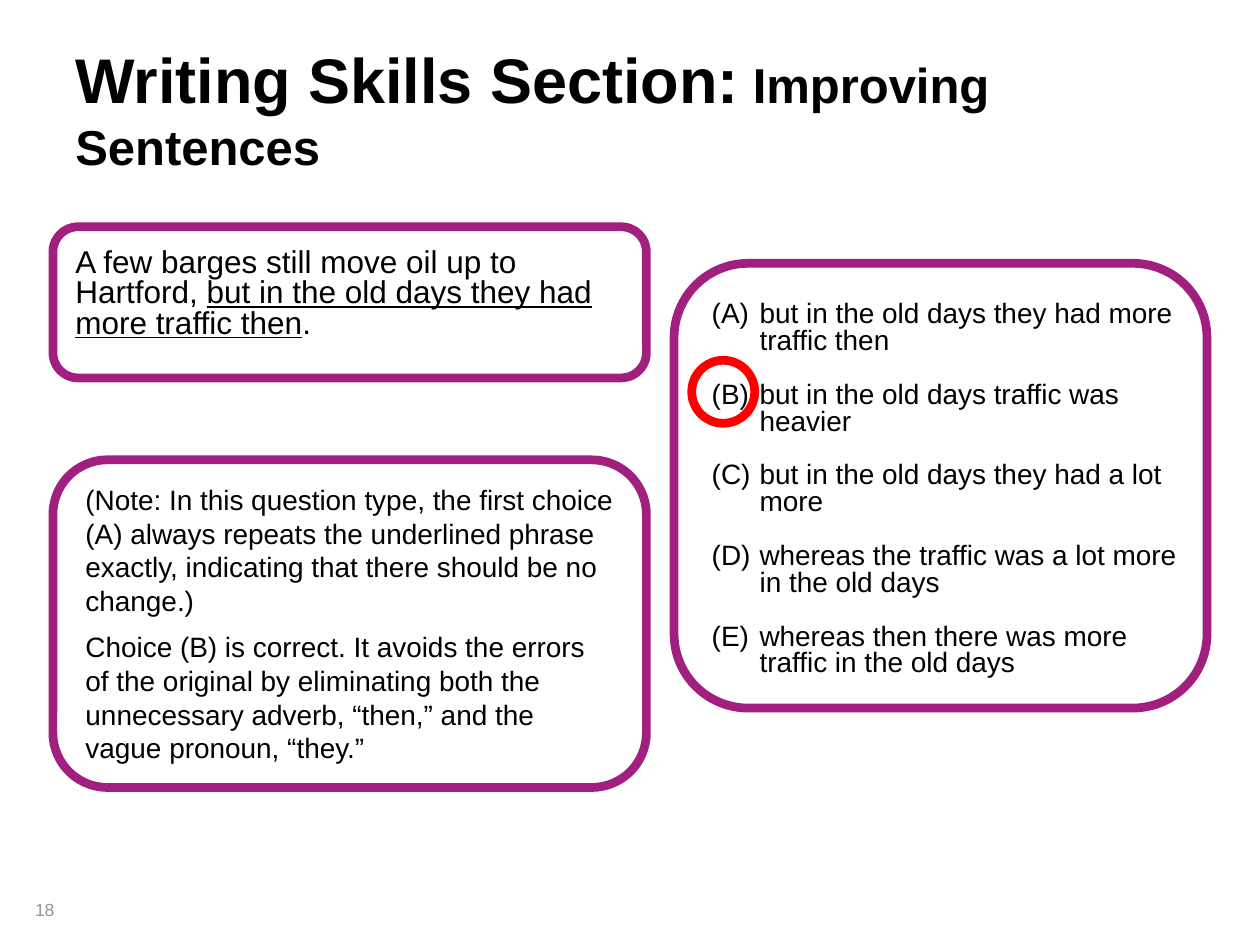
import lxml.etree
import pptx
import pptx.dml.color
import pptx.enum.shapes
import pptx.enum.text
import pptx.oxml.ns
import pptx.util

Inches = pptx.util.Inches
Pt = pptx.util.Pt
Shape = pptx.enum.shapes.MSO_SHAPE
Anchor = pptx.enum.text.MSO_ANCHOR

CHOICES = [
    "but in the old days they had more traffic then",
    "but in the old days traffic was heavier",
    "but in the old days they had a lot more",
    "whereas the traffic was a lot more in the old days",
    "whereas then there was more traffic in the old days",
]
NOTE = ("(Note: In this question type, the first choice (A) always repeats the "
        "underlined phrase exactly, indicating that there should be no change.)")
ANSWER = ("Choice (B) is correct. It avoids the errors of the original by "
          "eliminating both the unnecessary adverb, “then,” and the vague "
          "pronoun, “they.”")


def color(hex_string):
    return pptx.dml.color.RGBColor.from_string(hex_string)


class SlideWriter:
    font = "Arial"
    text_color = "000000"
    frame_color = "A11F7F"
    line_width = Pt(5)

    def __init__(self, page):
        self.page = page

    def outline(self, kind, left, top, width, height, line, fill=None):
        shape = self.page.shapes.add_shape(
            kind, Inches(left), Inches(top), Inches(width), Inches(height))
        shape.shadow.inherit = False
        if fill:
            shape.fill.solid()
            shape.fill.fore_color.rgb = color(fill)
        else:
            shape.fill.background()
        shape.line.color.rgb = color(line)
        shape.line.width = self.line_width

    def frame(self, left, top, width, height, fill=None):
        self.outline(Shape.ROUNDED_RECTANGLE, left, top, width, height,
                     self.frame_color, fill)

    def ring(self, left, top, size):
        self.outline(Shape.OVAL, left, top, size, size, "FF0000")

    def style(self, span, size, text_color=None):
        span.font.name = self.font
        span.font.size = Pt(size)
        span.font.color.rgb = color(text_color or self.text_color)

    def text(self, left, top, width, height, parts, size,
             anchor=Anchor.TOP, text_color=None):
        """Write one paragraph made of the given parts; return it."""
        box = self.page.shapes.add_textbox(
            Inches(left), Inches(top), Inches(width), Inches(height))
        frame = box.text_frame
        frame.word_wrap = True
        frame.vertical_anchor = anchor
        para = frame.paragraphs[0]
        for part in parts:
            span = para.add_run()
            span.text = part
            self.style(span, size, text_color)
        return para

    def lettered_list(self, left, top, width, height, items, size):
        box = self.page.shapes.add_textbox(
            Inches(left), Inches(top), Inches(width), Inches(height))
        frame = box.text_frame
        frame.word_wrap = True
        frame.text = "\n".join(items)
        for index, para in enumerate(frame.paragraphs):
            para.line_spacing = 0.8
            if index:
                para.space_before = Pt(15.3)
            properties = para._p.get_or_add_pPr()
            properties.set("marL", str(Inches(0.38)))
            properties.set("indent", str(-Inches(0.38)))
            bullet = lxml.etree.SubElement(
                properties, pptx.oxml.ns.qn("a:buAutoNum"))
            bullet.set("type", "alphaUcParenBoth")
            self.style(para.runs[0], size)


def main():
    deck = pptx.Presentation()
    deck.slide_width, deck.slide_height = Inches(10), Inches(7.5)
    page = deck.slides.add_slide(deck.slide_layouts[6])
    writer = SlideWriter(page)

    writer.text(0.18, 6.95, 0.64, 0.4, ["18"], 10, Anchor.BOTTOM, "8C9B91")

    title = writer.text(0.5, 0.38, 9, 1.06,
                        ["Writing Skills Section:", " Improving Sentences"],
                        36, Anchor.BOTTOM)
    for span in title.runs:
        span.font.bold = True
    title.runs[1].font.size = Pt(28)

    writer.frame(0.42, 1.8, 4.71, 1.2)
    question = writer.text(
        0.5, 1.93, 4.47, 0.83,
        ["A few barges still move oil up to Hartford, ",
         "but in the old days they had more traffic then", "."], 18)
    question.line_spacing = 0.8
    question.runs[1].font.underline = True

    writer.frame(0.42, 3.65, 4.71, 2.6, "FFFFFF")
    writer.text(0.58, 3.78, 4.54, 1.18, [NOTE], 16)
    writer.text(0.58, 4.95, 4.38, 1.18, [ANSWER], 16)

    writer.frame(5.35, 2.09, 4.23, 3.53, "FFFFFF")
    writer.lettered_list(5.55, 2.35, 3.95, 3.12, CHOICES, 16)
    writer.ring(5.49, 2.86, 0.5)

    deck.save("out.pptx")


if __name__ == "__main__":
    main()
